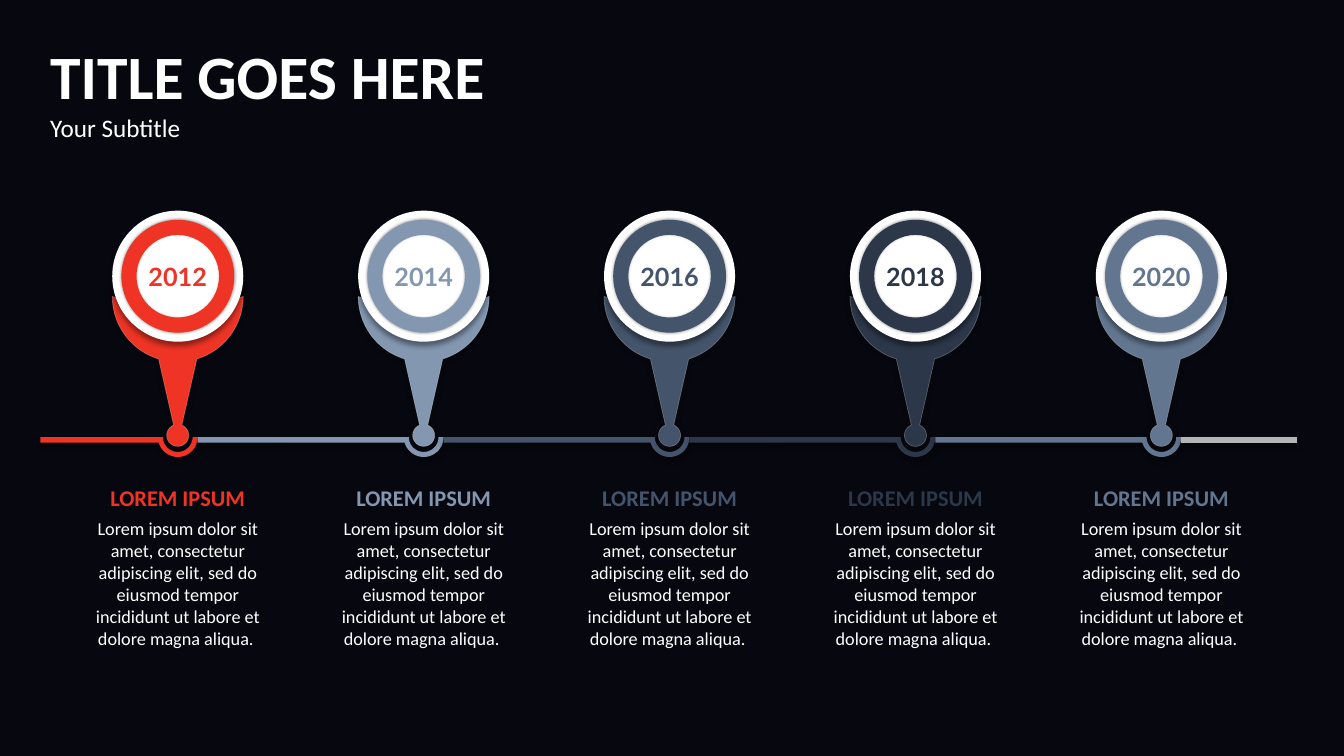
from dataclasses import dataclass
from math import cos, radians, sin

from lxml.etree import SubElement
from pptx import Presentation
from pptx.dml.color import RGBColor
from pptx.enum.shapes import MSO_SHAPE as Shape
from pptx.enum.text import MSO_ANCHOR as Anchor, PP_ALIGN as Align
from pptx.oxml.ns import qn
from pptx.util import Pt

TITLE, SUBTITLE = "TITLE GOES HERE", "Your Subtitle"
HEADING = "LOREM IPSUM"
BODY = ("Lorem ipsum dolor sit amet, consectetur adipiscing elit, sed do "
        "eiusmod tempor incididunt ut labore et dolore magna aliqua. ")
MILESTONES = [("2012", "EF3425"), ("2014", "8397B1"), ("2016", "44546B"),
              ("2018", "2C3749"), ("2020", "62768F")]


@dataclass(frozen=True)
class Theme:
    background: str = "07080F"
    white: str = "FFFFFF"
    tail: str = "B5B5B5"
    shadow: str = "000000"
    font: str = "Calibri"
    year_font: str = "Lato"
    title: int = 44
    label: int = 18
    heading: int = 16
    body: int = 13


THEME = Theme()

# Layout in points
PAGE_WIDTH, PAGE_HEIGHT = 960, 540
FIRST_X, STEP_X = 127, 175.65
RAIL_LEFT, RAIL_RIGHT, RAIL_TOP, RAIL_THICK = 28.8, 926.4, 312.2, 4
SOCKET_INNER, SOCKET_OUTER = 10.6, 14.2
DISC_Y, DISC_RADIUS = 197.3, 46.8
RING_RADIUS, RING_THICK = 40.3, 10.8
HEAD_Y, BALL_Y, BALL_RADIUS = 211.7, 311, 7.9
NOTE_TOP, NOTE_WIDTH, NOTE_HEIGHT = 343.4, 144, 124


def arc(x, y, radius, start, end, steps=24):
    """Points on a circle; angles in degrees, clockwise from the right."""
    angles = [radians(start + (end - start) * i / steps) for i in range(steps + 1)]
    return [(x + radius * cos(a), y + radius * sin(a)) for a in angles]


def paint(shape, color, blur, distance=0):
    """Solid fill, no outline and a soft shadow below."""
    shape.fill.solid()
    shape.fill.fore_color.rgb = RGBColor.from_string(color)
    shape.line.fill.background()
    shape.shadow.inherit = False
    effects = shape._element.spPr.find(qn("a:effectLst"))
    outer = SubElement(effects, qn("a:outerShdw"), blurRad=str(Pt(blur)),
                       dist=str(Pt(distance)), dir="5400000", rotWithShape="0")
    tone = SubElement(outer, qn("a:srgbClr"), val=THEME.shadow)
    SubElement(tone, qn("a:alpha"), val="40000")


def add_outline(page, points, color, blur, distance=0):
    (x, y), *rest = [(Pt(x), Pt(y)) for x, y in points]
    builder = page.shapes.build_freeform(x, y)
    builder.add_line_segments(rest, close=True)
    shape = builder.convert_to_shape()
    paint(shape, color, blur, distance)
    return shape


def add_circle(group, kind, x, radius, color, blur, distance=0):
    circle = group.shapes.add_shape(kind, Pt(x - radius), Pt(DISC_Y - radius),
                                    Pt(2 * radius), Pt(2 * radius))
    paint(circle, color, blur, distance)
    return circle


def write(para, text, *, size, color, font=THEME.font, bold=False,
          align=Align.LEFT, before=0):
    para.alignment = align
    if before:
        para.space_before = Pt(before)
    span = para.add_run()
    span.text = text
    span.font.name, span.font.size, span.font.bold = font, Pt(size), bold
    span.font.color.rgb = RGBColor.from_string(color)


def add_text_box(page, left, top, width, height):
    box = page.shapes.add_textbox(Pt(left), Pt(top), Pt(width), Pt(height))
    box.text_frame.word_wrap = True
    return box.text_frame


def add_rail(page, start, x, color):
    """Line from start to a half-round socket centred on x."""
    bottom = RAIL_TOP + RAIL_THICK
    points = [(start, RAIL_TOP),
              *arc(x, RAIL_TOP, SOCKET_INNER, 180, 0),
              *arc(x, RAIL_TOP, SOCKET_OUTER, 0, 164),
              (start, bottom)]
    add_outline(page, points, color, blur=4, distance=3)


def add_pin(page, x, color):
    points = [(x - 37, HEAD_Y + 3.6), (x - 19, HEAD_Y + 8), (x, HEAD_Y + 9.4),
              (x + 19, HEAD_Y + 8), (x + 37, HEAD_Y + 3.6),
              *arc(x, HEAD_Y, DISC_RADIUS, 0, 73),
              *arc(x, BALL_Y, BALL_RADIUS, -68, 248),
              *arc(x, HEAD_Y, DISC_RADIUS, 107, 180)]
    pin = add_outline(page, points, color, blur=5)
    pin.line.color.rgb = RGBColor.from_string(THEME.white)
    pin.line.width = Pt(0.5)
    tone = pin.line._ln.find(".//" + qn("a:srgbClr"))
    SubElement(tone, qn("a:alpha"), val="25000")


def add_badge(page, x, year, color):
    group = page.shapes.add_group_shape()
    disc = add_circle(group, Shape.OVAL, x, DISC_RADIUS, THEME.white, blur=4, distance=3)
    frame = disc.text_frame
    frame.margin_left = frame.margin_right = 0
    frame.vertical_anchor = Anchor.MIDDLE
    write(frame.paragraphs[0], year, size=THEME.label, color=color,
          font=THEME.year_font, bold=True, align=Align.CENTER)
    ring = add_circle(group, Shape.DONUT, x, RING_RADIUS, color, blur=2)
    ring.adjustments[0] = RING_THICK / (2 * RING_RADIUS)


def add_note(page, x, color):
    frame = add_text_box(page, x - NOTE_WIDTH / 2, NOTE_TOP, NOTE_WIDTH, NOTE_HEIGHT)
    frame.margin_left = frame.margin_right = Pt(5)
    frame.margin_top = frame.margin_bottom = Pt(2.2)
    write(frame.paragraphs[0], HEADING, size=THEME.heading, color=color,
          bold=True, align=Align.CENTER)
    write(frame.add_paragraph(), BODY, size=THEME.body, color=THEME.white,
          align=Align.CENTER, before=4.9)


def main():
    deck = Presentation()
    deck.slide_width, deck.slide_height = Pt(PAGE_WIDTH), Pt(PAGE_HEIGHT)
    page = deck.slides.add_slide(deck.slide_layouts[6])
    page.background.fill.solid()
    page.background.fill.fore_color.rgb = RGBColor.from_string(THEME.background)

    frame = add_text_box(page, 28.8, 23.8, 468, 82)
    write(frame.paragraphs[0], TITLE, size=THEME.title, color=THEME.white, bold=True)
    write(frame.add_paragraph(), SUBTITLE, size=THEME.label, color=THEME.white)

    start = RAIL_LEFT
    for index, (year, color) in enumerate(MILESTONES):
        x = FIRST_X + index * STEP_X
        add_rail(page, start, x, color)
        add_pin(page, x, color)
        add_badge(page, x, year, color)
        add_note(page, x, color)
        start = x + SOCKET_OUTER

    bottom = RAIL_TOP + RAIL_THICK
    add_outline(page, [(start, RAIL_TOP), (RAIL_RIGHT, RAIL_TOP),
                       (RAIL_RIGHT, bottom), (start, bottom)],
                THEME.tail, blur=4, distance=3)
    deck.save("out.pptx")


if __name__ == "__main__":
    main()
